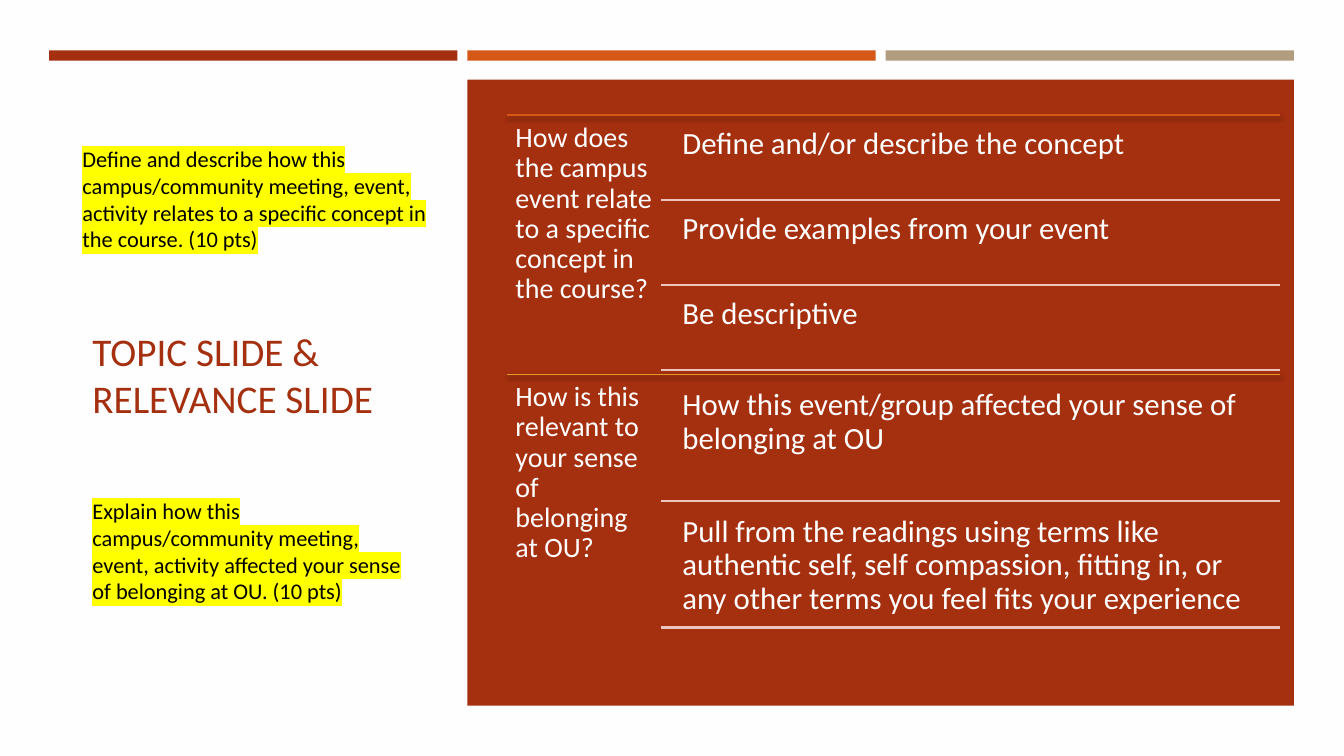
import lxml.etree
import pptx
import pptx.dml.color
import pptx.enum.shapes
import pptx.enum.text
import pptx.oxml
import pptx.oxml.ns
import pptx.util

Cm = pptx.util.Cm
Pt = pptx.util.Pt
qn = pptx.oxml.ns.qn

COLORS = {
    "page": "FFFEFF",
    "brick": "A5300F",
    "orange": "D55816",
    "amber": "E19825",
    "sand": "B19C7D",
    "pink": "EBC4BD",
    "white": "FFFFFF",
    "black": "000000",
    "yellow": "FFFF00",
}
FONT = "Calibri"
PAGE_WIDTH, PAGE_HEIGHT = 33.87, 19.05
MARGIN = 1.24
BAR_WIDTH, BAR_PITCH = 10.29, 10.54

QUESTION_LEFT, QUESTION_WIDTH = 12.78, 3.89
RULE_LEFT, RULE_RIGHT = 16.66, 32.26
ANSWER_LEFT = 16.97
BLOCKS_TOP, BLOCK_HEIGHT = 2.9, 6.53
GAP_SHARE = 0.05

BLOCKS = [
    ("How does the campus event relate to a specific concept in the course?", "orange", [
        "Define and/or describe the concept",
        "Provide examples from your event",
        "Be descriptive",
    ]),
    ("How is this relevant to your sense of belonging at OU?", "amber", [
        "How this event/group affected your sense of belonging at OU",
        "Pull from the readings using terms like authentic self, self compassion, "
        "fitting in, or any other terms you feel fits your experience",
    ]),
]


def rgb(color):
    return pptx.dml.color.RGBColor.from_string(COLORS[color])


def add_panel(slide, left, top, width, height, color):
    panel = slide.shapes.add_shape(
        pptx.enum.shapes.MSO_SHAPE.RECTANGLE, Cm(left), Cm(top), Cm(width), Cm(height))
    panel.shadow.inherit = False
    panel.fill.solid()
    panel.fill.fore_color.rgb = rgb(color)
    panel.line.fill.background()


def add_text(slide, left, top, width, height, text, size, color,
             inset=None, spacing=None, middle=False, highlight=None):
    box = slide.shapes.add_textbox(Cm(left), Cm(top), Cm(width), Cm(height))
    frame = box.text_frame
    frame.word_wrap = True
    if inset is not None:
        frame.margin_left = frame.margin_right = Cm(inset)
        frame.margin_top = frame.margin_bottom = Cm(inset)
    if middle:
        frame.vertical_anchor = pptx.enum.text.MSO_ANCHOR.MIDDLE
    paragraph = frame.paragraphs[0]
    if spacing:
        paragraph.line_spacing = spacing
    run = paragraph.add_run()
    run.text = text
    run.font.size = Pt(size)
    run.font.name = FONT
    run.font.color.rgb = rgb(color)
    if highlight:
        frame.auto_size = pptx.enum.text.MSO_AUTO_SIZE.SHAPE_TO_FIT_TEXT
        marker = pptx.oxml.parse_xml(
            '<a:highlight xmlns:a="http://schemas.openxmlformats.org/drawingml/2006/main">'
            f'<a:srgbClr val="{COLORS[highlight]}"/></a:highlight>')
        run.font.fill
        run.font._element.find(qn("a:solidFill")).addnext(marker)


def add_rule(slide, left, right, top, color, weight, shadow=False):
    rule = slide.shapes.add_connector(
        pptx.enum.shapes.MSO_CONNECTOR.STRAIGHT, Cm(left), Cm(top), Cm(right), Cm(top))
    rule.line.color.rgb = rgb(color)
    rule.line.width = Pt(weight)
    effects = lxml.etree.SubElement(rule._element.spPr, qn("a:effectLst"))
    if shadow:
        outer = lxml.etree.SubElement(
            effects, qn("a:outerShdw"), blurRad=str(Pt(3)), dist=str(Pt(2)),
            dir="5400000", rotWithShape="0")
        tint = lxml.etree.SubElement(outer, qn("a:srgbClr"), val=COLORS["black"])
        lxml.etree.SubElement(tint, qn("a:alpha"), val="55000")


def add_block(slide, top, question, rule_color, answers):
    add_rule(slide, QUESTION_LEFT, RULE_RIGHT, top, rule_color, 1, shadow=True)
    add_text(slide, QUESTION_LEFT, top, QUESTION_WIDTH, BLOCK_HEIGHT,
             question, 20, "white", inset=0.21, spacing=0.9)
    count = len(answers)
    row_height = BLOCK_HEIGHT / (count + (count + 1) * GAP_SHARE)
    gap = row_height * GAP_SHARE
    for index, answer in enumerate(answers):
        row_top = top + gap + index * (row_height + gap)
        add_text(slide, ANSWER_LEFT, row_top, RULE_RIGHT - ANSWER_LEFT, row_height,
                 answer, 22, "white", inset=0.23, spacing=0.9)
        add_rule(slide, RULE_LEFT, RULE_RIGHT, row_top + row_height, "pink", 1.75)


def main():
    deck = pptx.Presentation()
    deck.slide_width = Cm(PAGE_WIDTH)
    deck.slide_height = Cm(PAGE_HEIGHT)
    slide = deck.slides.add_slide(deck.slide_layouts[6])

    add_panel(slide, 0, 0, PAGE_WIDTH, PAGE_HEIGHT, "page")
    add_text(slide, 2.08, 2.9, 8.48, 13.08, "TOPIC SLIDE & RELEVANCE SLIDE",
             28, "brick", middle=True)
    for index, color in enumerate(("brick", "orange", "sand")):
        add_panel(slide, MARGIN + index * BAR_PITCH, 1.27, BAR_WIDTH, 0.26, color)
    add_panel(slide, MARGIN + BAR_PITCH, 2.01, BAR_PITCH + BAR_WIDTH, 15.77, "brick")

    for index, (question, rule_color, answers) in enumerate(BLOCKS):
        add_block(slide, BLOCKS_TOP + index * BLOCK_HEIGHT, question, rule_color, answers)

    add_text(slide, 1.83, 3.53, 9.9, 4.37,
             "Define and describe how this campus/community meeting, event, activity "
             "relates to a specific concept in the course. (10 pts)",
             16, "black", highlight="yellow")
    add_text(slide, 2.08, 12.4, 8.69, 3.76,
             "Explain how this campus/community meeting, event, activity affected "
             "your sense of belonging at OU. (10 pts)",
             16, "black", highlight="yellow")
    deck.save("out.pptx")


if __name__ == "__main__":
    main()
